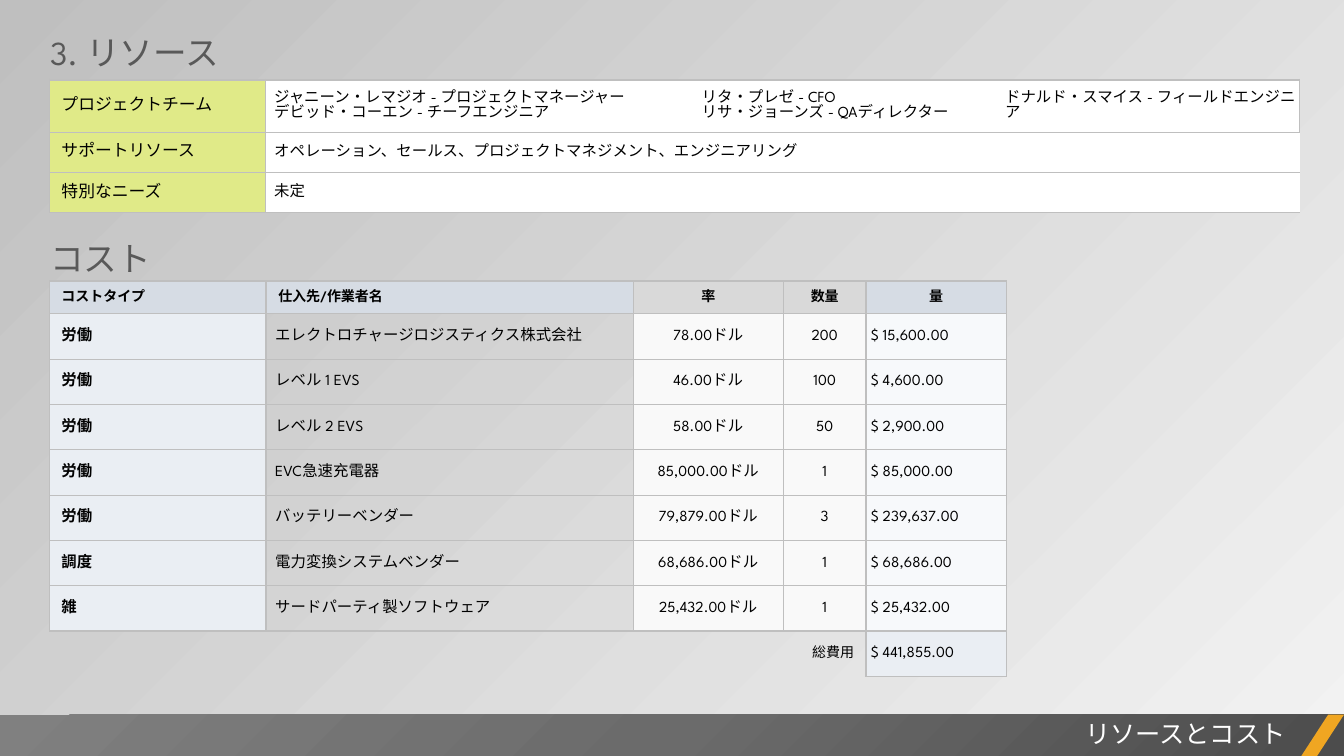
from lxml import etree
from pptx import Presentation
from pptx.dml.color import RGBColor
from pptx.enum import shapes, text
from pptx.oxml import parse_xml
from pptx.oxml.ns import nsdecls, qn
from pptx.util import Inches, Pt

FONT = "League Spartan"
BLACK = RGBColor(0, 0, 0)
WHITE = RGBColor(0xFF, 0xFF, 0xFF)
HEADING = RGBColor(0x59, 0x59, 0x59)
BACK_LIGHT = RGBColor(0xF2, 0xF2, 0xF2)
RULE = RGBColor(0xBF, 0xBF, 0xBF)
BAR_DARK = RGBColor(0x4C, 0x4C, 0x4C)
BAR_MID = RGBColor(0x6B, 0x6B, 0x6B)
BAR_LIGHT = RGBColor(0x80, 0x80, 0x80)
ORANGE = RGBColor(0xF0, 0xA6, 0x22)
LIME = RGBColor(0xE0, 0xEA, 0x88)
HEAD_BLUE = RGBColor(0xD6, 0xDC, 0xE4)
HEAD_GRAY = RGBColor(0xD9, 0xD9, 0xD9)
LABEL_BLUE = RGBColor(0xEA, 0xEE, 0xF3)
PALE_GRAY = RGBColor(0xF9, 0xF9, 0xF9)
PALE_BLUE = RGBColor(0xF7, 0xF9, 0xFB)

LEFT, CENTER, RIGHT = text.PP_ALIGN.LEFT, text.PP_ALIGN.CENTER, text.PP_ALIGN.RIGHT
NO_STYLE = "{2D5ABB26-0587-4C30-8999-92F81FD0307C}"

TEAM = [
    ["ジャニーン・レマジオ - プロジェクトマネージャー", "デビッド・コーエン - チーフエンジニア"],
    ["リタ・プレゼ - CFO", "リサ・ジョーンズ - QAディレクター"],
    ["ドナルド・スマイス - フィールドエンジニア"],
]
NEEDS = [
    ("サポートリソース", "オペレーション、セールス、プロジェクトマネジメント、エンジニアリング"),
    ("特別なニーズ", "未定"),
]
COSTS = [
    ("労働", "エレクトロチャージロジスティクス株式会社", "78.00", "200", "15,600.00"),
    ("労働", "レベル 1 EVS", "46.00", "100", "4,600.00"),
    ("労働", "レベル 2 EVS", "58.00", "50", "2,900.00"),
    ("労働", "EVC急速充電器", "85,000.00", "1", "85,000.00"),
    ("労働", "バッテリーベンダー", "79,879.00", "3", "239,637.00"),
    ("調度", "電力変換システムベンダー", "68,686.00", "1", "68,686.00"),
    ("雑", "サードパーティ製ソフトウェア", "25,432.00", "1", "25,432.00"),
]


def write(frame, lines, size, color=BLACK, bold=False, align=LEFT):
    for i, line in enumerate(lines):
        paragraph = frame.paragraphs[0] if i == 0 else frame.add_paragraph()
        paragraph.alignment = align
        run = paragraph.add_run()
        run.text = line
        run.font.size, run.font.bold, run.font.name = Pt(size), bold, FONT
        run.font.color.rgb = color
        etree.SubElement(run.font._element, qn("a:ea")).set("typeface", FONT)


def add_heading(slide, words, left, top, width):
    box = slide.shapes.add_textbox(Inches(left), Inches(top), Inches(width), Inches(0.5))
    box.text_frame.word_wrap = False
    write(box.text_frame, [words], 24, HEADING)


def add_panel(slide, kind, left, top, width, height, color):
    panel = slide.shapes.add_shape(
        kind, Inches(left), Inches(top), Inches(width), Inches(height))
    panel.shadow.inherit = False
    panel.line.fill.background()
    panel.fill.solid()
    panel.fill.fore_color.rgb = color
    return panel


def shade_from_corner(panel, colors):
    """Radial gradient that starts at the bottom right corner."""
    stops = "".join(
        f'<a:gs pos="{i * 50000}"><a:srgbClr val="{color}"/></a:gs>'
        for i, color in enumerate(colors))
    gradient = parse_xml(
        f'<a:gradFill {nsdecls("a")}><a:gsLst>{stops}</a:gsLst>'
        '<a:path path="circle"><a:fillToRect l="100000" t="100000"/></a:path></a:gradFill>')
    properties = panel._element.spPr
    properties.replace(properties.find(qn("a:solidFill")), gradient)


def add_grid(slide, left, top, widths, heights):
    frame = slide.shapes.add_table(
        len(heights), len(widths), Inches(left), Inches(top),
        Inches(sum(widths)), Inches(sum(heights)))
    grid = frame.table
    grid.first_row = grid.horz_banding = False
    grid._tbl.tblPr.find(qn("a:tableStyleId")).text = NO_STYLE
    for column, width in zip(grid.columns, widths):
        column.width = Inches(width)
    for row, height in zip(grid.rows, heights):
        row.height = Inches(height)
    return grid


def rule_cell(cell, left, right, top, bottom):
    """Draw borders by weight in points; None leaves a side open."""
    properties = cell._tc.get_or_add_tcPr()
    sides = zip(("lnL", "lnR", "lnT", "lnB"), (left, right, top, bottom))
    for i, (side, weight) in enumerate(sides):
        paint = f'<a:solidFill><a:srgbClr val="{RULE}"/></a:solidFill>' if weight else "<a:noFill/>"
        properties.insert(i, parse_xml(
            f'<a:{side} {nsdecls("a")} w="{Pt(weight or 0)}">{paint}</a:{side}>'))


def rule_grid(grid, across, down):
    """Rule the grid; across holds row edges, down maps column edges to weights."""
    for r in range(len(grid.rows)):
        for c in range(len(grid.columns)):
            rule_cell(grid.cell(r, c), down.get(c), down.get(c + 1), across[r], across[r + 1])


def fill_cell(cell, lines, size=11, fill=None, bold=False, align=LEFT, inset=0.01, right=0.01):
    cell.vertical_anchor = text.MSO_ANCHOR.MIDDLE
    cell.margin_left, cell.margin_right = Inches(inset), Inches(right)
    cell.margin_top, cell.margin_bottom = Inches(0.01), 0
    if fill is not None:
        cell.fill.solid()
        cell.fill.fore_color.rgb = fill
    write(cell.text_frame, lines, size, bold=bold, align=align)


def add_resources(slide):
    grid = add_grid(slide, 0.49, 0.79, [2.14, 4.24, 3.01, 3.01], [0.52, 0.4, 0.4])
    rule_grid(grid, [1.5, 0.5, 0.5, 0.5], {0: 0.5, 1: 0.5, 4: 0.5})
    fill_cell(grid.cell(0, 0), ["プロジェクトチーム"], 12, LIME, inset=0.12)
    for c, members in enumerate(TEAM, 1):
        fill_cell(grid.cell(0, c), members, fill=WHITE, inset=0.09)
    for r, (label, need) in enumerate(NEEDS, 1):
        fill_cell(grid.cell(r, 0), [label], 12, LIME, inset=0.12)
        grid.cell(r, 1).merge(grid.cell(r, 3))
        fill_cell(grid.cell(r, 1), [need], fill=WHITE, inset=0.09)


def add_costs(slide):
    total = len(COSTS) + 1
    grid = add_grid(slide, 0.49, 2.79, [2.15, 2.15, 1.49, 1.49, 0.82, 1.39],
                    [0.32] + [0.45] * total)
    rule_grid(grid, [1.5] + [0.5] * len(COSTS) + [1, 1],
              {0: 0.5, 1: 2, 3: 0.5, 4: 0.5, 5: 2, 6: 0.5})
    # Header
    heads = [(0, "コストタイプ", HEAD_BLUE, LEFT, 0.12),
             (1, "仕入先/作業者名", HEAD_BLUE, LEFT, 0.12),
             (3, "率", HEAD_GRAY, CENTER, 0.01),
             (4, "数量", HEAD_GRAY, CENTER, 0.01),
             (5, "量", HEAD_BLUE, CENTER, 0.01)]
    for c, head, fill, align, inset in heads:
        fill_cell(grid.cell(0, c), [head], 10, fill, True, align, inset)
    # Cost lines
    for r, (kind, vendor, rate, count, amount) in enumerate(COSTS, 1):
        fill_cell(grid.cell(r, 0), [kind], fill=LABEL_BLUE, bold=True, inset=0.12)
        fill_cell(grid.cell(r, 1), [vendor], inset=0.09)
        fill_cell(grid.cell(r, 3), [rate + "ドル"], fill=PALE_GRAY, align=CENTER)
        fill_cell(grid.cell(r, 4), [count], fill=PALE_GRAY, align=CENTER)
        fill_cell(grid.cell(r, 5), [" $ " + amount], fill=PALE_BLUE)
    for r in range(total):
        grid.cell(r, 1).merge(grid.cell(r, 2))
    # Total: open on every side except around the sum
    for c in range(5):
        properties = grid.cell(total, c)._tc.tcPr
        for side in ("lnL", "lnR", "lnT", "lnB"):
            properties.remove(properties.find(qn(f"a:{side}")))
        rule_cell(grid.cell(total, c), None, 2 if c == 4 else None, 1, None)
    grid.cell(total, 3).merge(grid.cell(total, 4))
    fill_cell(grid.cell(total, 3), ["総費用"], 10, align=RIGHT, right=0.12)
    fill_cell(grid.cell(total, 5), [" $ 441,855.00"], fill=LABEL_BLUE)


def place_title(slide, words):
    title = slide.shapes.title
    title.left, title.top = Inches(5.25), Inches(7.08)
    title.width, title.height = Inches(7.6), Inches(0.4)
    title.text_frame.vertical_anchor = text.MSO_ANCHOR.TOP
    title.text_frame.auto_size = text.MSO_AUTO_SIZE.NONE
    write(title.text_frame, [words], 18, WHITE, align=RIGHT)
    slide.shapes._spTree.append(title._element)  # bring in front of the bar


def main():
    deck = Presentation()
    deck.slide_width, deck.slide_height = Inches(13.33), Inches(7.5)
    slide = deck.slides.add_slide(deck.slide_layouts[5])

    # Background
    backdrop = slide.background.fill
    backdrop.gradient()
    backdrop.gradient_angle = 135
    for stop, color in zip(backdrop.gradient_stops, (BACK_LIGHT, RULE)):
        stop.color.rgb = color

    # Bottom bar with the slide title
    bar = add_panel(slide, shapes.MSO_SHAPE.RECTANGLE, 0, 7.09, 13.33, 0.42, BAR_DARK)
    shade_from_corner(bar, (BAR_DARK, BAR_MID, BAR_LIGHT))
    accent = add_panel(slide, shapes.MSO_SHAPE.PARALLELOGRAM, 12.9, 7.09, 0.43, 0.42, ORANGE)
    accent.adjustments[0] = 0.65
    place_title(slide, "リソースとコスト")

    # Resources and costs
    add_heading(slide, "3. リソース", 0.4, 0.27, 2.47)
    add_resources(slide)
    add_heading(slide, "コスト", 0.4, 2.31, 1.25)
    add_costs(slide)
    deck.save("out.pptx")


if __name__ == "__main__":
    main()
